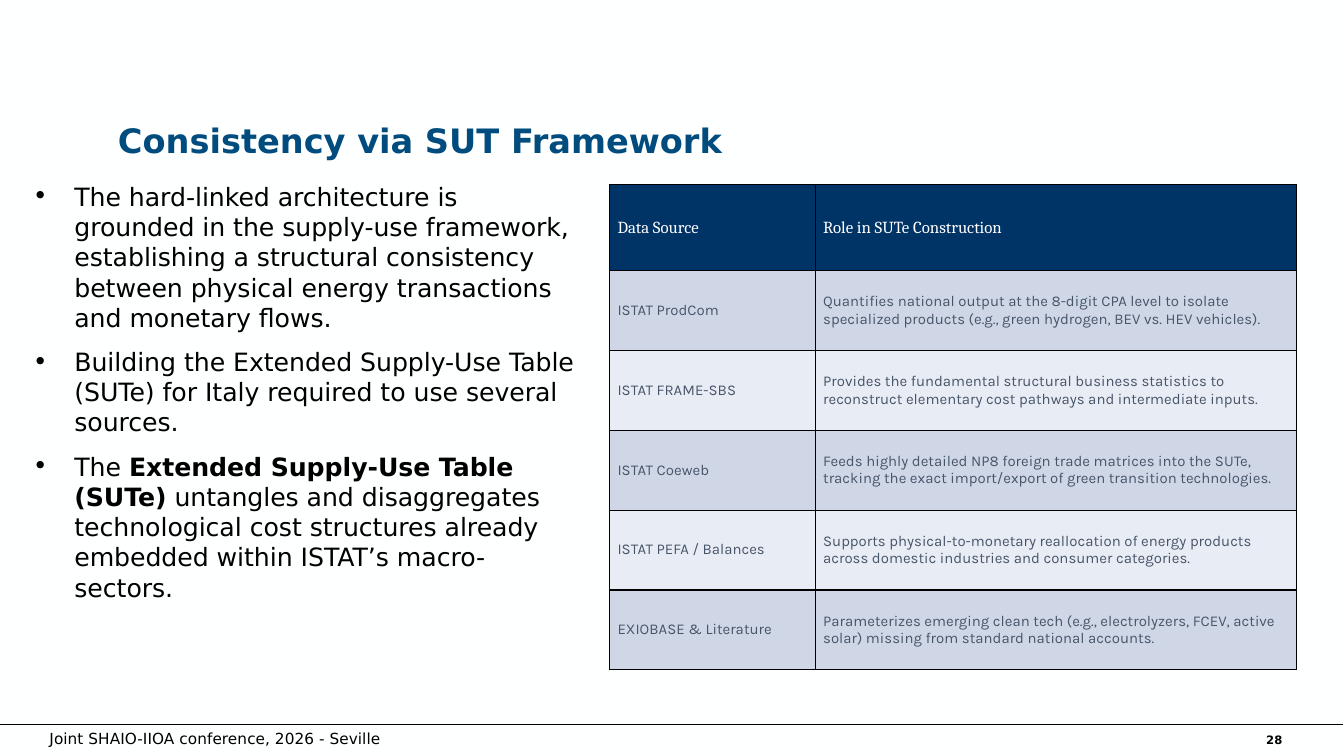
from dataclasses import dataclass
from lxml.etree import SubElement
from pptx import Presentation
from pptx.dml.color import RGBColor
from pptx.enum.shapes import MSO_CONNECTOR
from pptx.enum.text import MSO_ANCHOR, PP_ALIGN
from pptx.oxml.ns import qn
from pptx.util import Inches, Pt


@dataclass(frozen=True)
class Theme:
    page: str = "FEFFFF"
    ink: str = "000000"
    title: str = "004C7E"
    head: str = "003366"
    light: str = "FFFFFF"
    cell: str = "475569"
    bands: tuple = ("CFD7E7", "E8ECF4")
    sans: str = "DejaVu Sans"
    serif: str = "Cambria"
    grid: str = "Karla"
    big: float = 18
    body: float = 13.5
    top: float = 9
    small: float = 8
    foot: float = 8.25
    num: float = 6.2


THEME = Theme()


def unit(count):
    """Grid step: a tenth of an inch, 100 columns by 56.25 rows."""
    return Inches(count / 10)


def write(par, text, size, font=THEME.sans, color=THEME.ink, bold=False,
          align=PP_ALIGN.LEFT, line=None):
    """Add text to a paragraph; parts between ** marks are bold."""
    par.alignment = align
    if line:
        par.line_spacing = line
    for i, part in enumerate(text.split("**")):
        if not part:
            continue
        run = par.add_run()
        run.text = part
        run.font.size = Pt(size)
        run.font.name = font
        run.font.bold = bold or i % 2 == 1
        run.font.color.rgb = RGBColor.from_string(color)


class Deck:
    def __init__(self, theme):
        self.theme = theme
        self.show = Presentation()
        self.show.slide_width, self.show.slide_height = unit(100), unit(56.25)
        self.slide = self.show.slides.add_slide(self.show.slide_layouts[6])
        fill = self.slide.background.fill
        fill.solid()
        fill.fore_color.rgb = RGBColor.from_string(theme.page)

    def box(self, area, anchor=MSO_ANCHOR.TOP):
        frame = self.slide.shapes.add_textbox(*map(unit, area)).text_frame
        frame.word_wrap = True
        frame.vertical_anchor = anchor
        return frame

    def text(self, area, text, size, anchor=MSO_ANCHOR.TOP, **style):
        frame = self.box(area, anchor)
        write(frame.paragraphs[0], text, size, **style)

    def list(self, area, items):
        frame = self.box(area)
        for i, item in enumerate(items):
            par = frame.add_paragraph() if i else frame.paragraphs[0]
            props = par._p.get_or_add_pPr()
            props.set("marL", str(unit(3.2)))
            props.set("indent", str(unit(-3.1)))
            SubElement(props, qn("a:buFont"), typeface=self.theme.sans)
            SubElement(props, qn("a:buChar"), char="•")
            if i:
                par.space_before = Pt(7.5)
            write(par, item, self.theme.body)

    def rule(self, left, right, row):
        line = self.slide.shapes.add_connector(
            MSO_CONNECTOR.STRAIGHT, unit(left), unit(row), unit(right), unit(row))
        line.line.color.rgb = RGBColor.from_string(self.theme.ink)
        line.line.width = Pt(0.5)
        SubElement(line._element.spPr, qn("a:effectLst"))

    def edge(self, cell):
        props = cell._tc.get_or_add_tcPr()
        for side in "LRTB":
            line = SubElement(props, qn(f"a:ln{side}"), w=str(Pt(0.75)))
            fill = SubElement(line, qn("a:solidFill"))
            SubElement(fill, qn("a:srgbClr"), val=self.theme.ink)

    def table(self, left, top, widths, heights, rows):
        look = self.theme
        table = self.slide.shapes.add_table(
            len(rows), len(widths), unit(left), unit(top),
            unit(sum(widths)), unit(sum(heights))).table
        for col, width in zip(table.columns, widths):
            col.width = unit(width)
        for r, (row, height) in enumerate(zip(rows, heights)):
            table.rows[r].height = unit(height)
            for c, text in enumerate(row):
                cell = table.cell(r, c)
                cell.margin_left = cell.margin_right = unit(0.6)
                cell.margin_top = cell.margin_bottom = unit(0.2)
                cell.vertical_anchor = MSO_ANCHOR.MIDDLE
                self.edge(cell)
                cell.fill.solid()
                shade = look.bands[(r - 1) % 2] if r else look.head
                cell.fill.fore_color.rgb = RGBColor.from_string(shade)
                par = cell.text_frame.paragraphs[0]
                if r:
                    write(par, text, look.small, font=look.grid, color=look.cell)
                else:
                    write(par, text, look.top, font=look.serif, color=look.light)


POINTS = [
    "The hard-linked architecture is grounded in the supply-use framework, "
    "establishing a structural consistency between physical energy "
    "transactions and monetary flows.",
    "Building the Extended Supply-Use Table (SUTe) for Italy required to use "
    "several sources.",
    "The **Extended Supply-Use Table (SUTe)** untangles and disaggregates "
    "technological cost structures already embedded within ISTAT’s "
    "macro-sectors.",
]

ROWS = [
    ("Data Source", "Role in SUTe Construction"),
    ("ISTAT ProdCom",
     "Quantifies national output at the 8-digit CPA level to isolate "
     "specialized products (e.g., green hydrogen, BEV vs. HEV vehicles)."),
    ("ISTAT FRAME-SBS",
     "Provides the fundamental structural business statistics to reconstruct "
     "elementary cost pathways and intermediate inputs."),
    ("ISTAT Coeweb",
     "Feeds highly detailed NP8 foreign trade matrices into the SUTe, "
     "tracking the exact import/export of green transition technologies."),
    ("ISTAT PEFA / Balances",
     "Supports physical-to-monetary reallocation of energy products across "
     "domestic industries and consumer categories."),
    ("EXIOBASE & Literature",
     "Parameterizes emerging clean tech (e.g., electrolyzers, FCEV, active "
     "solar) missing from standard national accounts."),
]


def main():
    deck = Deck(THEME)

    # Footer
    deck.text((85.3, 54, 11.1, 2.1), "28", THEME.num, MSO_ANCHOR.MIDDLE,
              bold=True, align=PP_ALIGN.RIGHT)
    deck.rule(-0.1, 99.9, 53.9)
    deck.text((2.7, 54, 83, 2.1), "Joint SHAIO-IIOA conference, 2026 - Seville",
              THEME.foot, MSO_ANCHOR.MIDDLE, line=0.9)

    # Title and points
    deck.list((1.35, 13, 42.8, 37.6), POINTS)
    deck.text((7.8, 7.85, 88.6, 7), "Consistency via SUT Framework", THEME.big,
              color=THEME.title, bold=True, line=1.2)

    # Source table
    deck.table(45.35, 13.75, (15.3, 35.8), [6.4] + [5.94] * 5, ROWS)

    deck.show.save("out.pptx")


if __name__ == "__main__":
    main()
